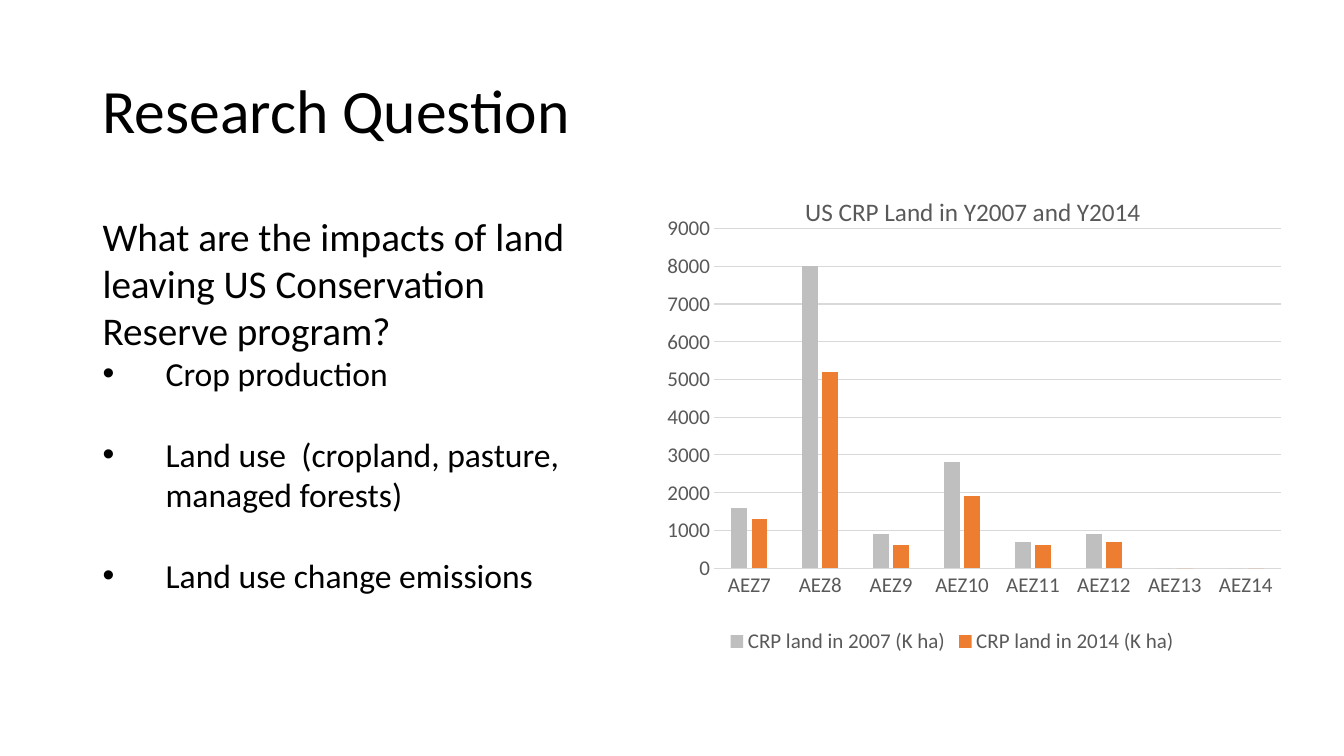
from lxml import etree
from pptx import Presentation
from pptx.chart.data import CategoryChartData
from pptx.dml.color import RGBColor
from pptx.enum.chart import XL_CHART_TYPE, XL_LEGEND_POSITION, XL_TICK_MARK
from pptx.enum.text import MSO_ANCHOR, MSO_AUTO_SIZE, PP_ALIGN
from pptx.oxml.ns import qn
from pptx.util import Cm, Pt

COLUMNS = XL_CHART_TYPE.COLUMN_CLUSTERED
LEGEND_BOTTOM = XL_LEGEND_POSITION.BOTTOM
NO_TICK = XL_TICK_MARK.NONE
TOP, MIDDLE = MSO_ANCHOR.TOP, MSO_ANCHOR.MIDDLE
NO_AUTOFIT = MSO_AUTO_SIZE.NONE
LEFT = PP_ALIGN.LEFT

FONT = "Calibri"
COLORS = {"text": "000000", "chart_text": "595959", "grid": "D9D9D9",
          "2007": "BFBFBF", "2014": "ED7D31"}

TITLE = "Research Question"
QUESTION = "What are the impacts of land leaving US Conservation Reserve program?"
IMPACTS = ["Crop production",
           "Land use  (cropland, pasture, managed forests)",
           "Land use change emissions"]

CHART_TITLE = "US CRP Land in Y2007 and Y2014"
ZONES = [f"AEZ{number}" for number in range(7, 15)]
CRP_LAND = {"2007": [1600, 8000, 900, 2800, 700, 900, 0, 0],
            "2014": [1300, 5200, 600, 1900, 600, 700, 0, 0]}

# left, top, width, height in centimetres
TITLE_BOX = (2.33, 1.01, 29.21, 3.68)
BODY_BOX = (2.33, 5.21, 13.49, 10.01)
CHART_BOX = (15.32, 4.17, 17.35, 12.42)
BULLET_INDENT = Cm(1.59)
BULLET_GAP = Pt(29)


def color(name):
    return RGBColor.from_string(COLORS[name])


def style_font(font, size, color_name):
    font.name = FONT
    font.size = Pt(size)
    font.bold = False
    font.color.rgb = color(color_name)


def place(shape, box):
    shape.left, shape.top, shape.width, shape.height = map(Cm, box)


def set_bullet(paragraph, indent):
    """Give the paragraph a hanging bullet, or none when indent is 0."""
    properties = paragraph._p.get_or_add_pPr()
    properties.set("marL", str(indent))
    properties.set("indent", str(-indent))
    if indent:
        etree.SubElement(properties, qn("a:buFont")).set("typeface", "Arial")
        etree.SubElement(properties, qn("a:buChar")).set("char", "•")
    else:
        etree.SubElement(properties, qn("a:buNone"))


def set_layout(element, **settings):
    """Fix a chart part's position as fractions of the chart area."""
    for old_layout in element.findall(qn("c:layout")):
        element.remove(old_layout)
    layout = etree.Element(qn("c:layout"))
    manual = etree.SubElement(layout, qn("c:manualLayout"))
    for tag, value in settings.items():
        etree.SubElement(manual, qn(f"c:{tag}")).set("val", str(value))
    text = element.find(qn("c:tx"))
    element.insert(0 if text is None else element.index(text) + 1, layout)


def fill_title(shape):
    place(shape, TITLE_BOX)
    frame = shape.text_frame
    frame.text = TITLE
    frame.vertical_anchor = MIDDLE
    paragraph = frame.paragraphs[0]
    paragraph.alignment = LEFT
    paragraph.line_spacing = 0.9
    style_font(paragraph.runs[0].font, 44, "text")


def fill_body(shape):
    place(shape, BODY_BOX)
    frame = shape.text_frame
    frame.text = "\n".join([QUESTION, *IMPACTS])
    frame.vertical_anchor = TOP
    frame.auto_size = NO_AUTOFIT
    for index, paragraph in enumerate(frame.paragraphs):
        paragraph.line_spacing = 1.0
        paragraph.space_before = BULLET_GAP if index > 1 else Pt(0)
        paragraph.space_after = Pt(0)
        set_bullet(paragraph, BULLET_INDENT if index else 0)
        style_font(paragraph.runs[0].font, 24 if index else 28, "text")


def add_land_chart(slide):
    data = CategoryChartData(number_format="0")
    data.categories = ZONES
    for year, values in CRP_LAND.items():
        data.add_series(f"CRP land in {year} (K ha)", values)
    chart = slide.shapes.add_chart(COLUMNS, *map(Cm, CHART_BOX), data).chart
    style_font(chart.font, 15, "chart_text")

    chart.has_title = True
    title = chart.chart_title
    title.include_in_layout = False
    title.text_frame.text = CHART_TITLE
    style_font(title.text_frame.paragraphs[0].runs[0].font, 18, "chart_text")
    set_layout(title._element, xMode="edge", yMode="edge", x=0.28, y=0.05)
    set_layout(chart._chartSpace.chart.plotArea, layoutTarget="inner",
               xMode="edge", yMode="edge", x=0.154, y=0.128, w=0.824, h=0.689)

    chart.has_legend = True
    chart.legend.position = LEGEND_BOTTOM
    chart.legend.include_in_layout = False
    style_font(chart.legend.font, 15, "chart_text")

    plot = chart.plots[0]
    plot.gap_width = 219
    plot.overlap = -27
    plot.vary_by_categories = False
    for year, series in zip(CRP_LAND, plot.series):
        series.format.fill.solid()
        series.format.fill.fore_color.rgb = color(year)

    zones, land = chart.category_axis, chart.value_axis
    for axis in (zones, land):
        axis.major_tick_mark = axis.minor_tick_mark = NO_TICK
        style_font(axis.tick_labels.font, 15, "chart_text")
    land.minimum_scale, land.maximum_scale, land.major_unit = 0, 9000, 1000
    land.tick_labels.number_format = "0"
    land.tick_labels.number_format_is_linked = False
    land.format.line.fill.background()
    for line in (zones.format.line, land.major_gridlines.format.line):
        line.color.rgb = color("grid")
        line.width = Pt(0.75)


def main():
    presentation = Presentation()
    presentation.slide_width, presentation.slide_height = Cm(33.87), Cm(19.05)
    slide = presentation.slides.add_slide(presentation.slide_layouts[1])
    fill_title(slide.shapes.title)
    fill_body(slide.placeholders[1])
    add_land_chart(slide)
    presentation.save("out.pptx")


if __name__ == "__main__":
    main()
